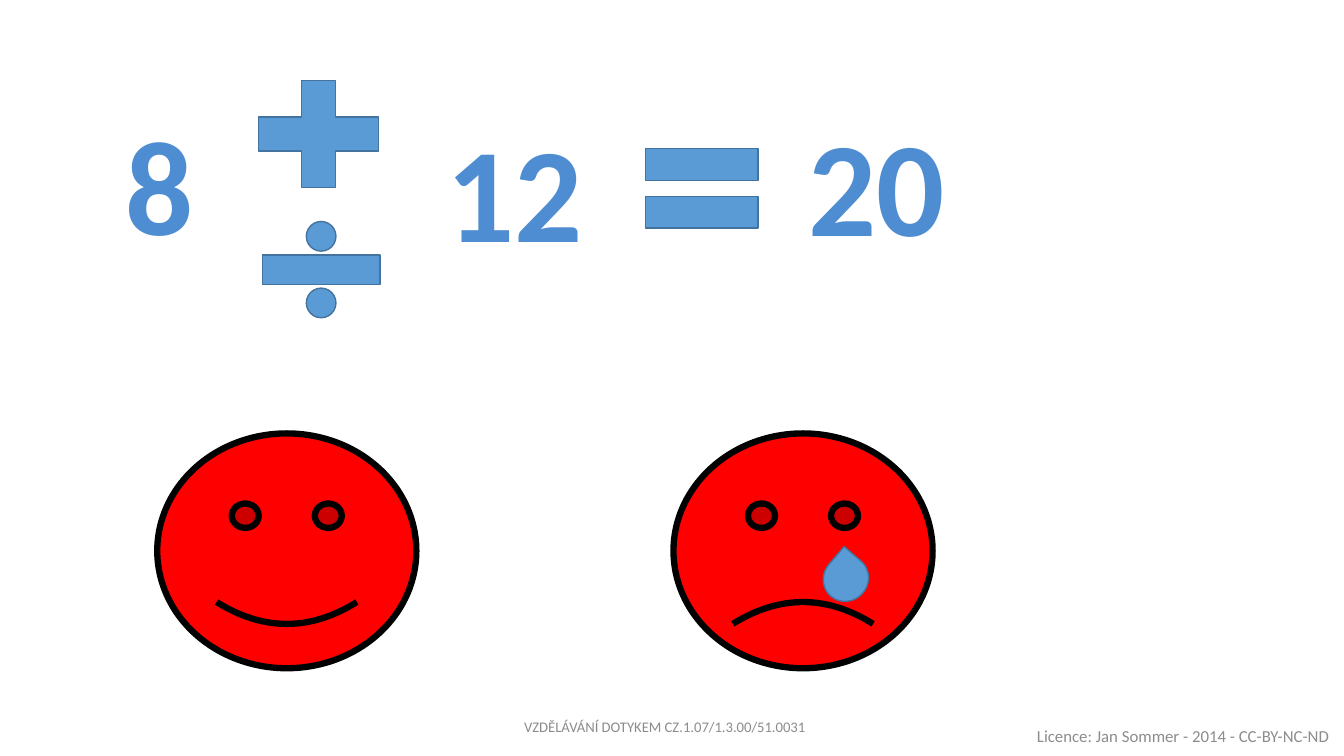
from pptx import Presentation
from pptx.dml.color import RGBColor as RGB
from pptx.enum.shapes import MSO_SHAPE as Shape
from pptx.enum.text import MSO_ANCHOR as Anchor, PP_ALIGN as Align
from pptx.util import Inches, Pt

# Theme
THEME = {
    "font": "Calibri",
    "digit": {"size": Pt(96), "bold": True, "color": "4E8DD1"},
    "credit": {"size": Pt(12), "bold": False, "color": "8C8C8C"},
    "footer": {"size": Pt(10.5), "bold": False, "color": "8C8C8C"},
    "sign": {"fill": "5B9BD5", "line": "43739E", "width": 1},
    "face": {"fill": "FF0000", "line": "000000", "width": 4.5},
}

# Content: left, top, width, height in inches
DIGITS = [
    ("8", (1.15, 0.95, 0.82, 1.72)),
    ("12", (4.33, 1.02, 1.87, 1.72)),
    ("20", (7.92, 0.96, 1.87, 1.72)),
]
SIGNS = [
    (Shape.MATH_PLUS, (2.35, 0.61, 1.62, 1.44)),
    (Shape.MATH_DIVIDE, (2.39, 2.05, 1.59, 1.25)),
    (Shape.MATH_EQUAL, (6.2, 1.2, 1.52, 1.34)),
]
HAPPY = (1.56, 4.3, 2.57, 2.33)
SAD = (6.68, 4.3, 2.57, 2.33)
TEAR = (8.16, 5.52, 0.46, 0.44)
FROWN, TILT = -0.0465, 310.6
NOTES = [
    ("Licence: Jan Sommer - 2014 - CC-BY-NC-ND", (10.14, 7.1, 3.19, 0.4),
     "credit", Align.CENTER),
    ("VZDĚLÁVÁNÍ DOTYKEM CZ.1.07/1.3.00/51.0031", (5.1, 7.01, 3.17, 0.4),
     "footer", Align.LEFT),
]


def add_text(home, text, box, style, anchor, align=Align.LEFT):
    frame = home.add_textbox(*map(Inches, box)).text_frame
    frame.word_wrap = True
    frame.vertical_anchor = anchor
    para = frame.paragraphs[0]
    para.alignment = align
    run = para.add_run()
    run.text = text
    look = THEME[style]
    for key, value in {"name": THEME["font"], "size": look["size"],
                       "bold": look["bold"]}.items():
        setattr(run.font, key, value)
    run.font.color.rgb = RGB.from_string(look["color"])


def add_form(home, kind, box, style):
    form = home.add_shape(kind, *map(Inches, box))
    look = THEME[style]
    form.shadow.inherit = False
    form.fill.solid()
    form.fill.fore_color.rgb = RGB.from_string(look["fill"])
    form.line.color.rgb = RGB.from_string(look["line"])
    form.line.width = Pt(look["width"])
    return form


def main():
    deck = Presentation()
    deck.slide_width, deck.slide_height = Inches(13.33), Inches(7.5)
    shapes = deck.slides.add_slide(deck.slide_layouts[6]).shapes

    # Sum: numbers and signs
    for text, box in DIGITS:
        add_text(shapes, text, box, "digit", Anchor.TOP)
    for kind, box in SIGNS:
        add_form(shapes, kind, box, "sign")

    # Faces: the sad one is grouped with its tear
    add_form(shapes, Shape.SMILEY_FACE, HAPPY, "face")
    group = shapes.add_group_shape().shapes
    sad = add_form(group, Shape.SMILEY_FACE, SAD, "face")
    sad.adjustments[0] = FROWN
    add_form(group, Shape.TEAR, TEAR, "sign").rotation = TILT

    # Footer lines
    for text, box, style, align in NOTES:
        add_text(shapes, text, box, style, Anchor.MIDDLE, align)

    deck.save("out.pptx")


if __name__ == "__main__":
    main()
